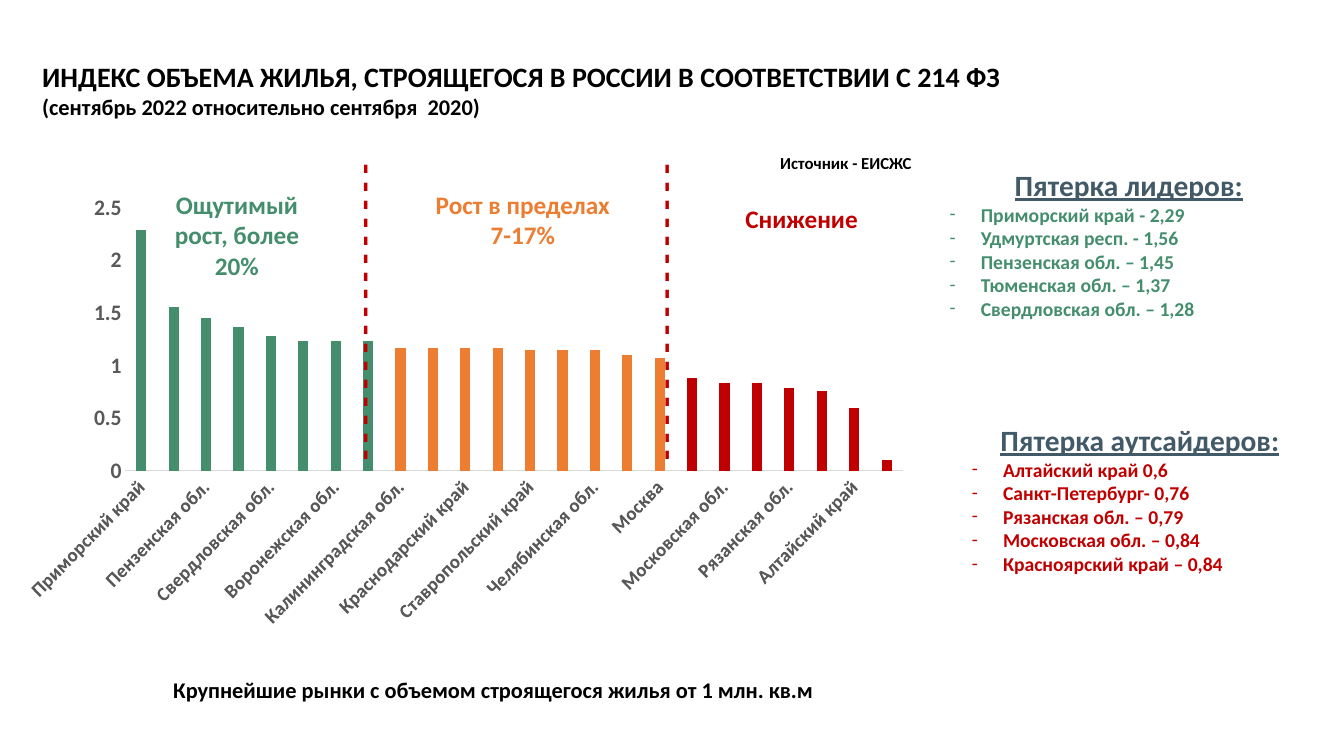
from dataclasses import dataclass
from typing import NamedTuple

from lxml.etree import SubElement as Sub
from pptx import Presentation
from pptx.chart.data import CategoryChartData as Data
from pptx.dml.color import RGBColor as Rgb
from pptx.enum.chart import XL_CHART_TYPE as Kind, XL_TICK_MARK as Tick
from pptx.enum.text import MSO_AUTO_SIZE as Fit, PP_ALIGN as Align
from pptx.oxml import parse_xml as to_xml
from pptx.oxml.ns import nsdecls, qn
from pptx.util import Emu, Pt

PX = 9144
STEP = 2


@dataclass(frozen=True)
class Theme:
    font: str = "Calibri"
    black: str = "000000"
    grey: str = "595959"
    rule: str = "D9D9D9"
    slate: str = "425968"
    green: str = "448E6D"
    orange: str = "ED7D31"
    red: str = "C00000"
    tiny: int = 12
    small: int = 14
    base: int = 16
    zone: int = 18
    title: int = 20
    head: int = 21
    dash: int = 24


class Box(NamedTuple):
    left: int
    top: int
    width: int
    height: int


class Line(NamedTuple):
    text: str
    size: int
    color: str
    center: bool = False
    under: bool = False
    bullet: bool = False


class Rank(NamedTuple):
    box: Box
    title: str
    color: str
    items: list[str]


class Zone(NamedTuple):
    box: Box
    label: str
    color: str
    bars: list[float]


T = Theme()

ZONES = [
    Zone(Box(152, 183, 166, 101), "Ощутимый рост, более 20%", T.green,
         [2.29, 1.56, 1.45, 1.37, 1.28, 1.24, 1.24, 1.24]),
    Zone(Box(411, 183, 215, 71), "Рост в пределах 7-17%", T.orange,
         [1.17, 1.17, 1.17, 1.17, 1.15, 1.15, 1.15, 1.1, 1.07]),
    Zone(Box(712, 197, 166, 40), "Снижение", T.red,
         [0.88, 0.84, 0.84, 0.79, 0.76, 0.6, 0.1]),
]

NAMES = [
    "Приморский край", "Пензенская обл.", "Свердловская обл.",
    "Воронежская обл.", "Калининградская обл.", "Краснодарский край",
    "Ставропольский край", "Челябинская обл.", "Москва",
    "Московская обл.", "Рязанская обл.", "Алтайский край",
]

RANKS = [
    Rank(Box(932, 161, 375, 163), "Пятерка лидеров:", T.green, [
        "Приморский край - 2,29", "Удмуртская респ. - 1,56",
        "Пензенская обл. – 1,45", "Тюменская обл. – 1,37",
        "Свердловская обл. – 1,28"]),
    Rank(Box(954, 414, 353, 163), "Пятерка аутсайдеров:", T.red, [
        "Алтайский край 0,6", "Санкт-Петербург- 0,76",
        "Рязанская обл. – 0,79", "Московская обл. – 0,84",
        "Красноярский край – 0,84"]),
]


def place(box: Box) -> list[Emu]:
    return [Emu(side * PX) for side in box]


def style(font, size: int, color: str, under: bool = False) -> None:
    font.name = T.font
    font.size = Pt(size)
    font.bold = True
    font.underline = under
    font.color.rgb = Rgb.from_string(color)


def write(slide, box: Box, *lines: Line, turn: int = 0) -> None:
    shape = slide.shapes.add_textbox(*place(box))
    shape.rotation = turn
    frame = shape.text_frame
    frame.word_wrap = True
    frame.auto_size = Fit.SHAPE_TO_FIT_TEXT
    for i, line in enumerate(lines):
        para = frame.add_paragraph() if i else frame.paragraphs[0]
        para.alignment = Align.CENTER if line.center else Align.LEFT
        run = para.add_run()
        run.text = line.text
        style(run.font, line.size, line.color, line.under)
        if line.bullet:
            props = para._p.get_or_add_pPr()
            props.set("marL", str(31 * PX))
            props.set("indent", str(-31 * PX))
            Sub(props, qn("a:buFont"), typeface=T.font)
            Sub(props, qn("a:buChar"), char="-")


def fill(target, color: str) -> None:
    target.format.fill.solid()
    target.format.fill.fore_color.rgb = Rgb.from_string(color)


def set_plot(chart, **parts: float) -> None:
    area = chart._chartSpace.chart.plotArea
    for old in area.findall(qn("c:layout")):
        area.remove(old)
    sizes = "".join(f'<c:{key} val="{val}"/>' for key, val in parts.items())
    area.insert(0, to_xml(
        f'<c:layout {nsdecls("c")}><c:manualLayout>'
        '<c:layoutTarget val="inner"/><c:xMode val="edge"/>'
        f'<c:yMode val="edge"/>{sizes}</c:manualLayout></c:layout>'))


def draw_chart(slide, box: Box) -> None:
    bars = [(val, zone.color) for zone in ZONES for val in zone.bars]
    data = Data()
    data.categories = ["" if i % STEP else NAMES[i // STEP]
                       for i in range(len(bars))]
    data.add_series("", [val for val, _ in bars])
    chart = slide.shapes.add_chart(
        Kind.COLUMN_CLUSTERED, *place(box), data).chart
    chart.has_legend = False
    chart.has_title = False
    chart.font.name = T.font
    plot = chart.plots[0]
    plot.vary_by_categories = False
    plot.gap_width = 219
    plot.overlap = -27
    row = plot.series[0]
    row.invert_if_negative = False
    fill(row, T.green)
    for i, (_, color) in enumerate(bars):
        if color != T.green:
            fill(row.points[i], color)
    cats, vals = chart.category_axis, chart.value_axis
    for axis, size in ((cats, T.small), (vals, T.base)):
        axis.has_major_gridlines = False
        axis.major_tick_mark = axis.minor_tick_mark = Tick.NONE
        style(axis.tick_labels.font, size, T.grey)
    cats.format.line.color.rgb = Rgb.from_string(T.rule)
    cats.format.line.width = Pt(0.75)
    vals.format.line.fill.background()
    vals.minimum_scale, vals.maximum_scale, vals.major_unit = 0, 2.5, 0.5
    node = cats._element
    node.find(qn("c:txPr")).find(qn("a:bodyPr")).set("rot", "-2700000")
    skip = to_xml(f'<c:tickLblSkip {nsdecls("c")} val="{STEP}"/>')
    node.find(qn("c:noMultiLvlLbl")).addprevious(skip)
    set_plot(chart, x=0.08, y=0.02, w=0.91, h=0.56)


def main() -> None:
    deck = Presentation()
    deck.slide_width, deck.slide_height = Emu(1333 * PX), Emu(750 * PX)
    slide = deck.slides.add_slide(deck.slide_layouts[6])
    write(slide, Box(32, 54, 999, 71),
          Line("ИНДЕКС ОБЪЕМА ЖИЛЬЯ, СТРОЯЩЕГОСЯ В РОССИИ В СООТВЕТСТВИИ С 214 ФЗ",
               T.title, T.black),
          Line("(сентябрь 2022 относительно сентября  2020)", T.base, T.black))
    draw_chart(slide, Box(26, 193, 878, 470))
    for left in (195, 494):
        write(slide, Box(left, 278, 328, 50),
              Line(" ".join("-" * 17), T.dash, T.red), turn=270)
    for zone in ZONES:
        write(slide, zone.box,
              Line(zone.label, T.zone, zone.color, center=True))
    for rank in RANKS:
        write(slide, rank.box,
              Line(rank.title, T.head, T.slate, center=True, under=True),
              *(Line(item, T.small, rank.color, bullet=True)
                for item in rank.items))
    write(slide, Box(162, 666, 660, 37),
          Line("Крупнейшие рынки с объемом строящегося жилья от 1 млн. кв.м",
               T.base, T.black))
    write(slide, Box(764, 147, 167, 30),
          Line("Источник - ЕИСЖС", T.tiny, T.black))
    deck.save("out.pptx")


if __name__ == "__main__":
    main()
